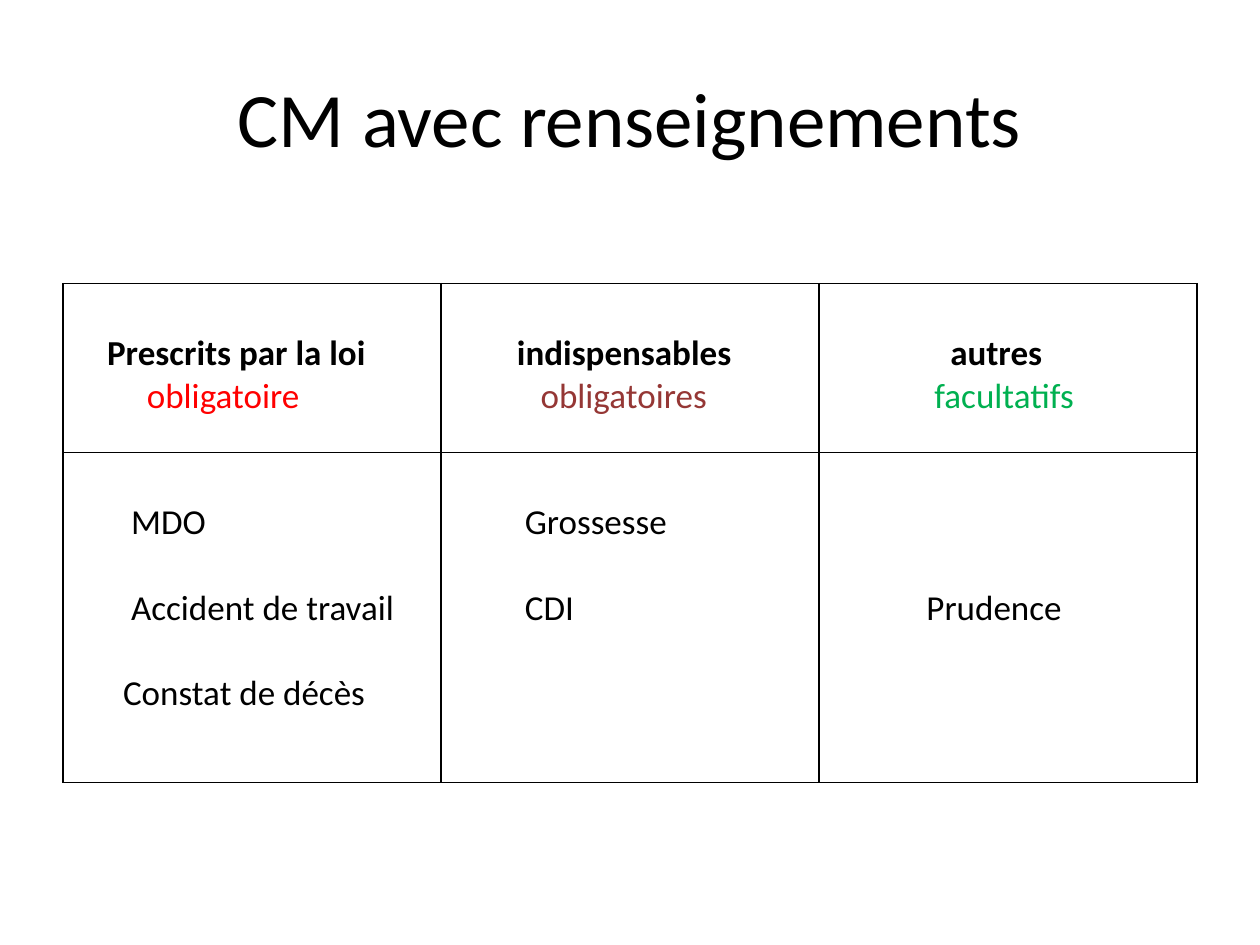
from dataclasses import dataclass

from lxml import etree
from pptx import Presentation
from pptx.dml.color import RGBColor
from pptx.enum import text
from pptx.oxml import ns
from pptx.util import Pt


@dataclass(frozen=True)
class Theme:
    font: str = "Calibri"
    title_size: int = 44
    cell_size: int = 20
    ink: str = "000000"
    legal: str = "FF0000"
    essential: str = "953735"
    optional: str = "00B050"


theme = Theme()
LINE = 24.4  # height of one line of cell text


def write(paragraph, wording, size=theme.cell_size, color=theme.ink, bold=False,
          indent=0, before=0, align=text.PP_ALIGN.LEFT):
    paragraph._p.get_or_add_pPr().set("marL", str(Pt(indent)))
    paragraph.alignment = align
    paragraph.space_before = Pt(before)
    run = paragraph.add_run()
    run.text = wording
    run.font.name = theme.font
    run.font.size = Pt(size)
    run.font.bold = bold
    run.font.color.rgb = RGBColor.from_string(color)


def add_borders(cell):
    properties = cell._tc.get_or_add_tcPr()
    for position, side in enumerate(("lnL", "lnR", "lnT", "lnB")):
        line = etree.Element(ns.qn(f"a:{side}"), w=str(Pt(1)))
        fill = etree.SubElement(line, ns.qn("a:solidFill"))
        etree.SubElement(fill, ns.qn("a:srgbClr"), val=theme.ink)
        properties.insert(position, line)


prs = Presentation()
prs.slide_width, prs.slide_height = Pt(720), Pt(540)
slide = prs.slides.add_slide(prs.slide_layouts[5])

title = slide.shapes.title
title.left, title.top, title.width, title.height = Pt(36), Pt(21.6), Pt(648), Pt(90)
title.text_frame.vertical_anchor = text.MSO_ANCHOR.MIDDLE
write(title.text_frame.paragraphs[0], "CM avec renseignements",
      size=theme.title_size, align=text.PP_ALIGN.CENTER)

# Each column: heading lines, then examples, as (wording, indent, format);
# the last number is how many lines down the examples start.
columns = [
    ([("Prescrits par la loi", 18, {"bold": True}),
      ("obligatoire", 40.7, {"color": theme.legal})],
     [("MDO", 31.7, {}), ("Accident de travail", 31.7, {}), ("Constat de décès", 27.1, {})], 1),
    ([("indispensables", 36.2, {"bold": True}),
      ("obligatoires", 49.7, {"color": theme.essential})],
     [("Grossesse", 40.7, {}), ("CDI", 40.7, {})], 1),
    ([("autres", 67.8, {"bold": True}),
      ("facultatifs", 58.8, {"color": theme.optional})],
     [("Prudence", 54.2, {})], 3),
]

table = slide.shapes.add_table(2, len(columns), Pt(36), Pt(162), Pt(648), Pt(285.1)).table
table.first_row = table.horz_banding = False
table.rows[0].height, table.rows[1].height = Pt(96.5), Pt(188.6)

for column, (heading, examples, example_start) in enumerate(columns):
    for row, (lines, start, gap) in enumerate(
            [(heading, 1, 0), (examples, example_start, LINE)]):
        cell = table.cell(row, column)
        cell.fill.background()
        add_borders(cell)
        cell.margin_top = Pt(3.6 + start * LINE)
        for number, (wording, indent, look) in enumerate(lines):
            frame = cell.text_frame
            paragraph = frame.add_paragraph() if number else frame.paragraphs[0]
            write(paragraph, wording, indent=indent, before=gap if number else 0, **look)

prs.save("out.pptx")
